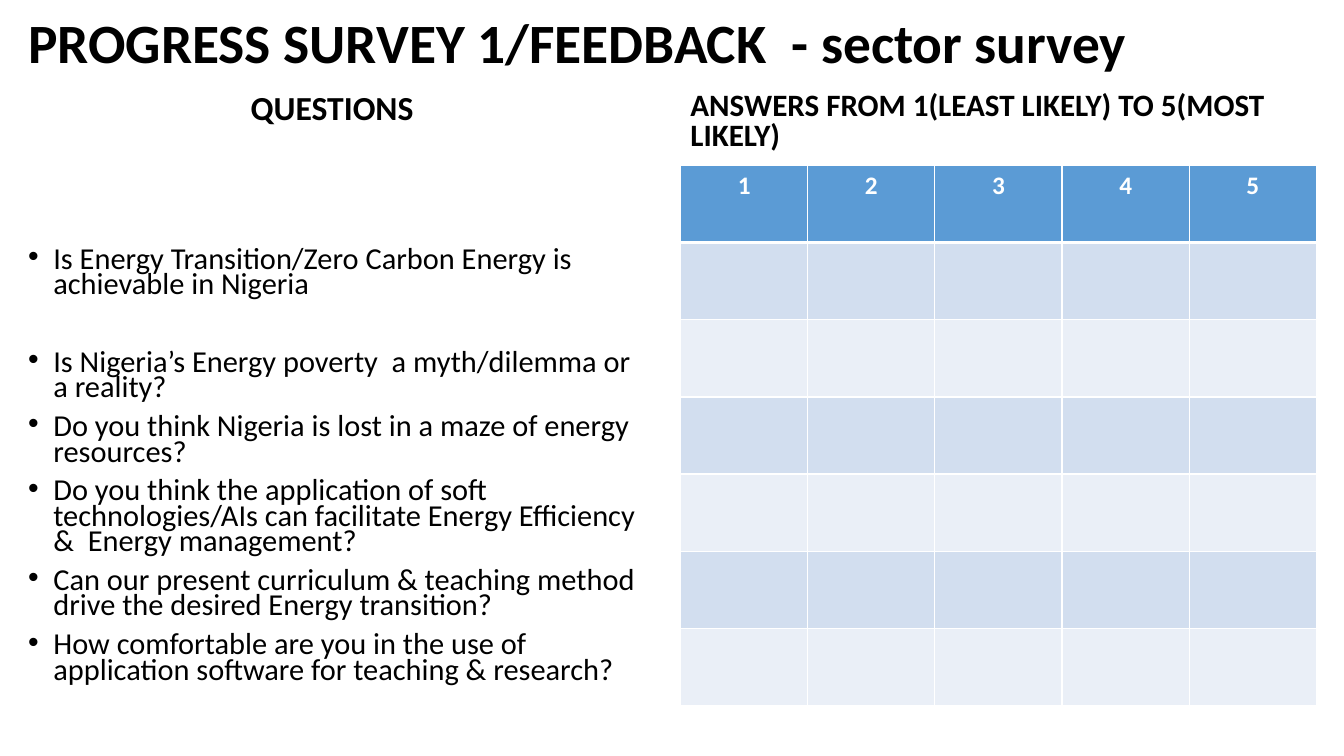
from lxml import etree
from pptx import Presentation
from pptx.dml.color import RGBColor
from pptx.enum.text import MSO_ANCHOR, PP_ALIGN
from pptx.oxml.ns import qn
from pptx.util import Cm, Pt

TOP, MIDDLE, BOTTOM = MSO_ANCHOR.TOP, MSO_ANCHOR.MIDDLE, MSO_ANCHOR.BOTTOM
LEFT, CENTER = PP_ALIGN.LEFT, PP_ALIGN.CENTER
FONT = "Calibri"
BLACK, WHITE, BLUE = "000000", "FFFFFF", "5B9BD5"
BANDS = ("D2DEEF", "EAEFF7")
QUESTIONS = (
    "Is Energy Transition/Zero Carbon Energy is achievable in Nigeria",
    "Is Nigeria’s Energy poverty  a myth/dilemma or  a reality?",
    "Do you think Nigeria is lost in a maze of energy resources?",
    "Do you think the application of soft technologies/AIs can facilitate "
    "Energy Efficiency &  Energy management?",
    "Can our present curriculum & teaching method drive the desired Energy transition?",
    "How comfortable are you in the use of application software for teaching & research?",
)
SCORES = ("1", "2", "3", "4", "5")


def colour(value):
    return RGBColor.from_string(value)


def add_span(para, text, size, ink=BLACK, bold=False):
    span = para.add_run()
    span.text = text
    span.font.name = FONT
    span.font.size = Pt(size)
    span.font.bold = bold
    span.font.color.rgb = colour(ink)


def add_frame(page, box, anchor):
    frame = page.shapes.add_textbox(*map(Cm, box)).text_frame
    frame.word_wrap = True
    frame.vertical_anchor = anchor
    return frame


def add_heading(page, box, text, size, anchor=BOTTOM, align=LEFT, spacing=0.8, before=10):
    para = add_frame(page, box, anchor).paragraphs[0]
    para.alignment = align
    para.line_spacing = spacing
    para.space_before = Pt(before)
    add_span(para, text, size, bold=True)


def add_bullet(para):
    properties = para._p.get_or_add_pPr()
    properties.set("marL", str(Cm(0.635)))
    properties.set("indent", str(-Cm(0.635)))
    etree.SubElement(properties, qn("a:buFont"), typeface="Arial")
    etree.SubElement(properties, qn("a:buChar"), char="•")


def add_questions(page, box):
    frame = add_frame(page, box, TOP)
    frame.margin_top = Cm(2.1)
    for index, question in enumerate(QUESTIONS):
        para = frame.paragraphs[0] if index == 0 else frame.add_paragraph()
        para.line_spacing = 0.7
        para.space_before = Pt(37.2 if index == 1 else 9.4)
        add_bullet(para)
        add_span(para, question, 21.7)


def set_borders(cell, widths):
    properties = cell._tc.get_or_add_tcPr()
    for position, (side, width) in enumerate(widths.items()):
        line = etree.Element(qn(f"a:ln{side}"), w=str(Pt(width)))
        fill = etree.SubElement(line, qn("a:solidFill"))
        etree.SubElement(fill, qn("a:srgbClr"), val=WHITE)
        properties.insert(position, line)


def add_answers(page, box):
    row_count = len(QUESTIONS) + 1
    table = page.shapes.add_table(row_count, len(SCORES), *map(Cm, box)).table
    for column in table.columns:
        column.width = Cm(box[2] / len(SCORES))
    for index, row in enumerate(table.rows):
        row.height = Cm(box[3] / row_count)
        for score, cell in zip(SCORES, row.cells):
            cell.fill.solid()
            cell.fill.fore_color.rgb = colour(BANDS[(index - 1) % 2] if index else BLUE)
            set_borders(cell, {"L": 1, "R": 1,
                               "T": 3 if index == 1 else 1,
                               "B": 3 if index == 0 else 1})
            if index == 0:
                para = cell.text_frame.paragraphs[0]
                para.alignment = CENTER
                add_span(para, score, 18, WHITE, True)


def build_survey(page, box):
    left, top, width, height = box
    right = left + 16.69
    right_width = width - 16.69
    add_heading(page, (left, top, width, 1.73),
                "PROGRESS SURVEY 1/FEEDBACK  - sector survey", 39.6,
                MIDDLE, spacing=0.9, before=0)
    add_heading(page, (left, top + 1.9, 15.82, 1.14), "QUESTIONS", 24, align=CENTER)
    add_questions(page, (left, top + 3.89, 16.21, height - 3.89))
    add_heading(page, (right, top + 1.9, right_width, 1.78),
                "ANSWERS FROM 1(LEAST LIKELY) TO 5(MOST LIKELY)", 22.2)
    add_answers(page, (right, top + 3.89, right_width, 13.61))


def main():
    deck = Presentation()
    deck.slide_width, deck.slide_height = Cm(33.87), Cm(19.05)
    page = deck.slides.add_slide(deck.slide_layouts[6])
    build_survey(page, (0.46, 0.28, 32.72, 18.26))
    deck.save("out.pptx")


if __name__ == "__main__":
    main()
